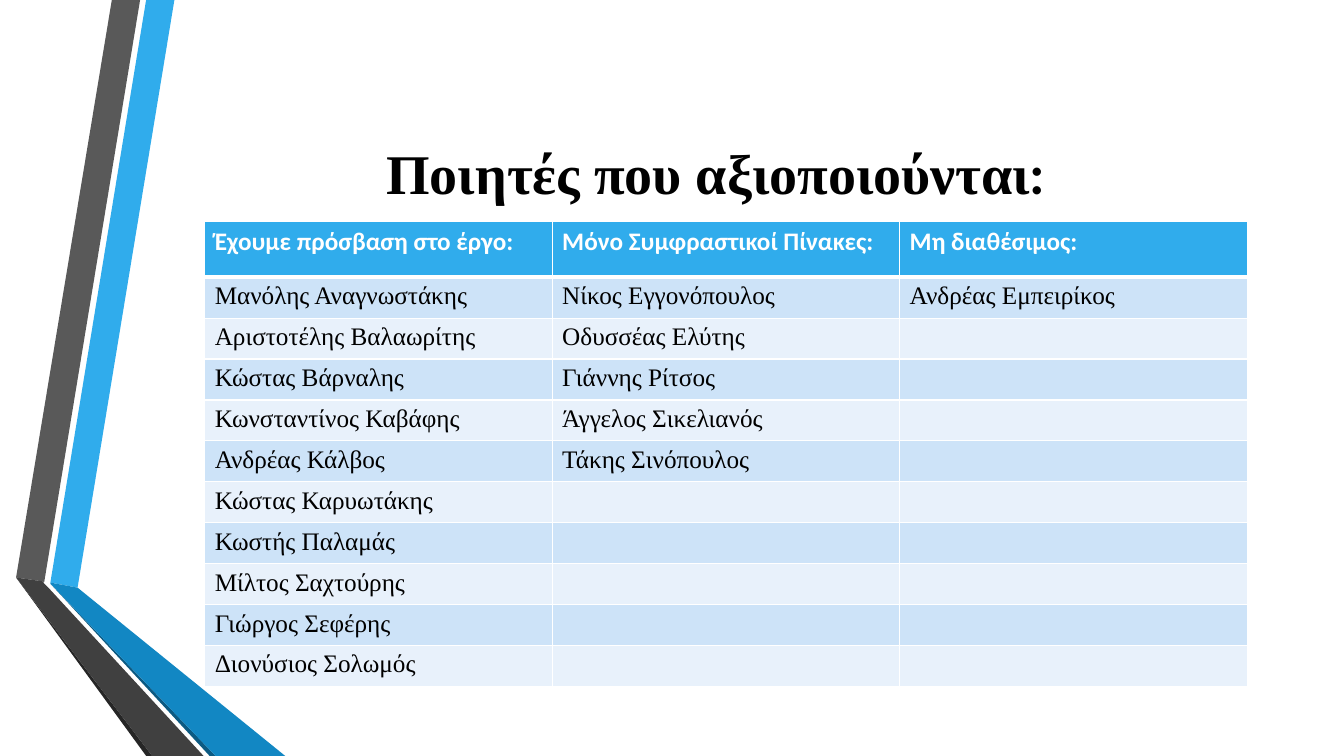
from dataclasses import dataclass
from itertools import zip_longest

from lxml.etree import SubElement
from pptx import Presentation
from pptx.dml.color import RGBColor
from pptx.enum.text import MSO_ANCHOR, PP_ALIGN
from pptx.oxml.ns import qn
from pptx.slide import Slide
from pptx.util import Inches, Pt

SERIF, SANS = "Times New Roman", "Calibri"
BLACK, WHITE, BLUE = "000000", "FFFFFF", "30ACEC"
BAND_COLOURS = ("CDE3F8", "E8F1FB")


@dataclass(frozen=True)
class Ribbon:
    colour: str
    points: tuple


RIBBONS = (
    Ribbon(BLUE, ((0.5, 5.78), (0.77, 5.83), (1.73, 0), (1.45, 0))),
    Ribbon("595959", ((1.39, 0), (1.11, 0), (0.16, 5.73), (0.44, 5.77))),
    Ribbon("262626", ((0.16, 5.73), (1.45, 7.5), (1.51, 7.5))),
    Ribbon("0C5A82", ((0.5, 5.79), (2.08, 7.5), (2.14, 7.5))),
    Ribbon("1287C3", ((0.5, 5.79), (2.14, 7.5), (2.83, 7.5), (0.77, 5.83), (0.5, 5.78))),
    Ribbon("404040", ((2.02, 7.5), (0.48, 5.83), (0.43, 5.78), (0.44, 5.77),
                      (0.16, 5.73), (1.51, 7.5))),
)


@dataclass(frozen=True)
class PoetColumn:
    heading: str
    poets: tuple


COLUMNS = (
    PoetColumn("Έχουμε πρόσβαση στο έργο:", (
        "Μανόλης Αναγνωστάκης", "Αριστοτέλης Βαλαωρίτης", "Κώστας Βάρναλης",
        "Κωνσταντίνος Καβάφης", "Ανδρέας Κάλβος", "Κώστας Καρυωτάκης",
        "Κωστής Παλαμάς", "Μίλτος Σαχτούρης", "Γιώργος Σεφέρης",
        "Διονύσιος Σολωμός")),
    PoetColumn("Μόνο Συμφραστικοί Πίνακες:", (
        "Νίκος Εγγονόπουλος", "Οδυσσέας Ελύτης", "Γιάννης Ρίτσος",
        "Άγγελος Σικελιανός", "Τάκης Σινόπουλος")),
    PoetColumn("Μη διαθέσιμος:", ("Ανδρέας Εμπειρίκος",)),
)

TABLE_LEFT, TABLE_TOP, TABLE_WIDTH, TABLE_HEIGHT = 2.03, 2.2, 10.34, 4.61
HEADER_HEIGHT = 0.55


def rgb(colour: str) -> RGBColor:
    return RGBColor.from_string(colour)


def set_format(target, values: dict) -> None:
    for name, value in values.items():
        setattr(target, name, value)


def add_run(paragraph, text: str, font: str, size: float, colour: str, bold: bool) -> None:
    run = paragraph.add_run()
    run.text = text
    set_format(run.font, {"name": font, "size": Pt(size), "bold": bold})
    run.font.color.rgb = rgb(colour)


def draw_ribbon(slide: Slide, ribbon: Ribbon) -> None:
    start, *others = [(Inches(x), Inches(y)) for x, y in ribbon.points]
    builder = slide.shapes.build_freeform(*start)
    builder.add_line_segments(others, close=True)
    shape = builder.convert_to_shape()
    shape.shadow.inherit = False
    shape.fill.solid()
    shape.fill.fore_color.rgb = rgb(ribbon.colour)
    shape.line.fill.background()


def draw_title(slide: Slide) -> None:
    title = slide.shapes.title
    set_format(title, {"left": Inches(1.62), "top": Inches(0.75),
                       "width": Inches(10.96), "height": Inches(1.92)})
    set_format(title.text_frame, {"vertical_anchor": MSO_ANCHOR.MIDDLE, "word_wrap": True})
    paragraph = title.text_frame.paragraphs[0]
    paragraph.alignment = PP_ALIGN.CENTER
    for text, font in (("Ποιητές που αξιοποιούνται", SERIF), (":", SANS)):
        add_run(paragraph, text, font, 40, BLACK, True)


def set_borders(cell, widths: dict) -> None:
    properties = cell._tc.get_or_add_tcPr()
    for side, width in widths.items():
        line = SubElement(properties, qn(f"a:ln{side}"), w=str(Pt(width)))
        fill = SubElement(line, qn("a:solidFill"))
        SubElement(fill, qn("a:srgbClr"), val=WHITE)


def draw_table(slide: Slide) -> None:
    poet_rows = list(zip_longest(*(column.poets for column in COLUMNS), fillvalue=""))
    rows = [tuple(column.heading for column in COLUMNS), *poet_rows]
    table = slide.shapes.add_table(
        len(rows), len(COLUMNS), Inches(TABLE_LEFT), Inches(TABLE_TOP),
        Inches(TABLE_WIDTH), Inches(TABLE_HEIGHT)).table
    for column in table.columns:
        column.width = Inches(TABLE_WIDTH / len(COLUMNS))
    poet_height = (TABLE_HEIGHT - HEADER_HEIGHT) / len(poet_rows)

    for row_index, texts in enumerate(rows):
        header = row_index == 0
        table.rows[row_index].height = Inches(HEADER_HEIGHT if header else poet_height)
        background = BLUE if header else BAND_COLOURS[(row_index - 1) % 2]
        font, colour = (SANS, WHITE) if header else (SERIF, BLACK)
        top, bottom = 3 if row_index == 1 else 1, 3 if header else 1
        for column_index, text in enumerate(texts):
            cell = table.cell(row_index, column_index)
            set_borders(cell, {"L": 1, "R": 1, "T": top, "B": bottom})
            cell.fill.solid()
            cell.fill.fore_color.rgb = rgb(background)
            if text:
                add_run(cell.text_frame.paragraphs[0], text, font, 18, colour, header)


def main() -> None:
    presentation = Presentation()
    set_format(presentation, {"slide_width": Inches(13.33), "slide_height": Inches(7.5)})
    slide = presentation.slides.add_slide(presentation.slide_layouts[5])

    # Folded ribbons on the left
    for ribbon in RIBBONS:
        draw_ribbon(slide, ribbon)

    # Title and table of poets
    draw_title(slide)
    draw_table(slide)
    presentation.save("out.pptx")


if __name__ == "__main__":
    main()
